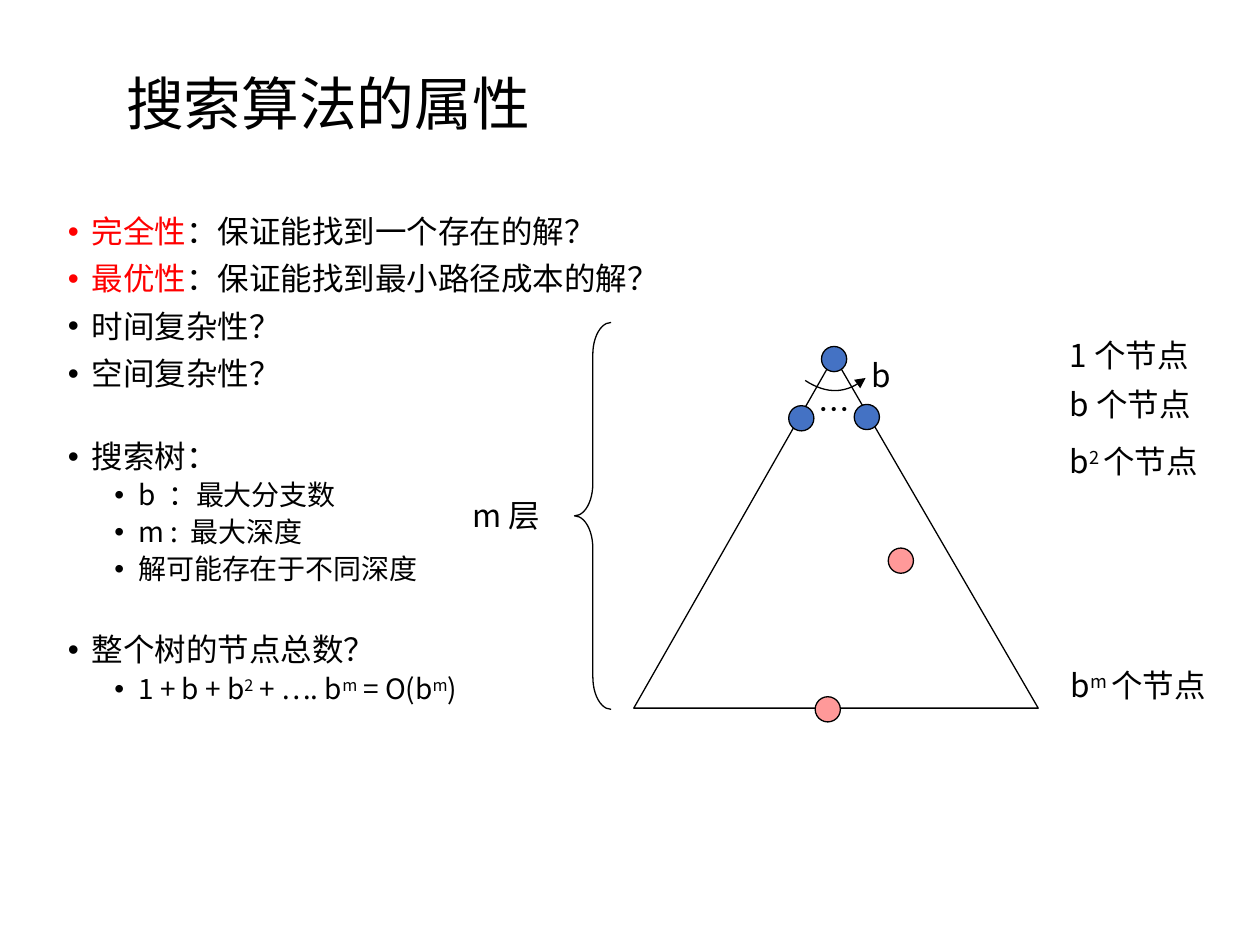
from dataclasses import dataclass
from lxml.etree import SubElement
from pptx import Presentation
from pptx.dml.color import RGBColor
from pptx.enum.shapes import MSO_SHAPE as Preset
from pptx.enum.text import MSO_ANCHOR as Anchor, PP_ALIGN as Align
from pptx.oxml.ns import qn
from pptx.util import Inches, Pt


@dataclass(frozen=True)
class Theme:
    font: str = "Noto Sans CJK SC"
    ink: str = "000000"
    key: str = "FF0000"
    branch: str = "4472C4"
    solution: str = "FF9999"
    title: float = 33
    text: float = 18
    detail: float = 16
    line: float = 0.75
    spacing: float = 0.9
    section_gap: float = 28
    level_gaps: tuple = (7.5, 3.8)
    indents: tuple = (0.19, 0.56)
    hanging: float = 0.19
    node: float = 0.2
    label_height: float = 0.4


THEME = Theme()
WIDTH, HEIGHT = 10, 7.5
TITLE = "搜索算法的属性"
TITLE_BOX = (0.9, 0.31, 8.25, 1.07)
BODY_BOX = (0.44, 1.67, 9.44, 5.17)

SECTIONS = [
    [
        (0, [("完全性", "key"), ("：保证能找到一个存在的解？", "")]),
        (0, [("最优性", "key"), ("：保证能找到最小路径成本的解？", "")]),
        (0, [("时间复杂性？", "")]),
        (0, [("空间复杂性？", "")]),
    ],
    [
        (0, [("搜索树：", "")]),
        (1, [("b  ：最大分支数", "")]),
        (1, [("m :  最大深度", "")]),
        (1, [("解可能存在于不同深度", "")]),
    ],
    [
        (0, [("整个树的节点总数？", "")]),
        (1, [("1 + b + b", ""), ("2", "super"), (" + …. b", ""), ("m", "super"),
             (" = O(b", ""), ("m", "super"), (")", "")]),
    ],
]

LEVEL_LEFT = 8.39
LABELS = [
    (6.4, 3.05, 0.3, [("…", "")]),
    (6.82, 2.78, 0.33, [("b", "")]),
    (3.65, 3.89, 1.38, [("m 层", "")]),
    (LEVEL_LEFT, 2.62, 1.22, [("1 个节点", "")]),
    (LEVEL_LEFT, 3.01, 1.22, [("b 个节点", "")]),
    (LEVEL_LEFT, 3.46, 1.22, [("b", ""), ("2 ", "super"), ("个节点", "")]),
    (8.4, 5.24, 1.6, [("b", ""), ("m ", "super"), ("个节点", "")]),
]

TREE = [(5.03, 5.62), (8.24, 5.62), (6.62, 2.83)]
ARC = [(6.39, 3.02), (6.65, 3.19), (6.87, 3.0)]
ARC_STEPS = 16
BRACE_BOX = (4.56, 2.56, 0.29, 3.07)
NODES = {
    THEME.branch: [(6.52, 2.75), (6.26, 3.22), (6.78, 3.21)],
    THEME.solution: [(6.47, 5.53), (7.05, 4.35)],
}


def rgb(color):
    return RGBColor.from_string(color)


def add_runs(paragraph, runs, size):
    for text, style in runs:
        run = paragraph.add_run()
        run.text = text
        run.font.size = Pt(size)
        run.font.name = THEME.font
        run.font.color.rgb = rgb(THEME.key if style == "key" else THEME.ink)
        properties = run.font._element
        SubElement(properties, qn("a:ea"), typeface=THEME.font)
        if style == "super":
            properties.set("baseline", "30000")


def add_bullet(paragraph, level):
    properties = paragraph._p.get_or_add_pPr()
    properties.set("marL", str(Inches(THEME.indents[level])))
    properties.set("indent", str(-Inches(THEME.hanging)))
    SubElement(properties, qn("a:buFont"), typeface="Arial")
    SubElement(properties, qn("a:buChar"), char="•")


def add_textbox(slide, box):
    frame = slide.shapes.add_textbox(*map(Inches, box)).text_frame
    frame.word_wrap = True
    return frame


def add_title(slide):
    title = slide.shapes.title
    title.left, title.top, title.width, title.height = map(Inches, TITLE_BOX)
    title.text_frame.vertical_anchor = Anchor.MIDDLE
    paragraph = title.text_frame.paragraphs[0]
    paragraph.alignment = Align.LEFT
    paragraph.line_spacing = THEME.spacing
    add_runs(paragraph, [(TITLE, "")], THEME.title)


def add_body(slide):
    frame = add_textbox(slide, BODY_BOX)
    for section_index, section in enumerate(SECTIONS):
        for item_index, (level, runs) in enumerate(section):
            first = section_index == item_index == 0
            paragraph = frame.paragraphs[0] if first else frame.add_paragraph()
            paragraph.level = level
            paragraph.line_spacing = THEME.spacing
            opens_section = section_index > 0 and item_index == 0
            gap = THEME.section_gap if opens_section else THEME.level_gaps[level]
            paragraph.space_before = Pt(gap)
            add_bullet(paragraph, level)
            add_runs(paragraph, runs, (THEME.text, THEME.detail)[level])


def style_outline(shape, fill=None):
    shape.shadow.inherit = False
    shape.line.color.rgb = rgb(THEME.ink)
    shape.line.width = Pt(THEME.line)
    if fill:
        shape.fill.solid()
        shape.fill.fore_color.rgb = rgb(fill)
    else:
        shape.fill.background()
    return shape


def add_outline(slide, points, close):
    start, *others = [(Inches(x), Inches(y)) for x, y in points]
    builder = slide.shapes.build_freeform(*start)
    builder.add_line_segments(others, close=close)
    return style_outline(builder.convert_to_shape())


def curve_points(start, control, end):
    steps = [step / ARC_STEPS for step in range(ARC_STEPS + 1)]
    return [
        tuple((1 - t) ** 2 * a + 2 * t * (1 - t) * b + t ** 2 * c
              for a, b, c in zip(start, control, end))
        for t in steps
    ]


def add_nodes(slide, color):
    for left, top in NODES[color]:
        box = (left, top, THEME.node, THEME.node)
        style_outline(slide.shapes.add_shape(Preset.OVAL, *map(Inches, box)), color)


def add_diagram(slide):
    add_outline(slide, TREE, True)
    add_nodes(slide, THEME.branch)
    arc = add_outline(slide, curve_points(*ARC), False)
    SubElement(arc.line._get_or_add_ln(), qn("a:tailEnd"), type="triangle")
    add_nodes(slide, THEME.solution)
    brace = slide.shapes.add_shape(Preset.LEFT_BRACE, *map(Inches, BRACE_BOX))
    brace.adjustments[0] = 0.88
    style_outline(brace)
    for left, top, width, runs in LABELS:
        frame = add_textbox(slide, (left, top, width, THEME.label_height))
        add_runs(frame.paragraphs[0], runs, THEME.text)


def main():
    presentation = Presentation()
    presentation.slide_width, presentation.slide_height = Inches(WIDTH), Inches(HEIGHT)
    slide = presentation.slides.add_slide(presentation.slide_layouts[5])
    add_title(slide)
    add_body(slide)
    add_diagram(slide)
    presentation.save("out.pptx")


if __name__ == "__main__":
    main()
